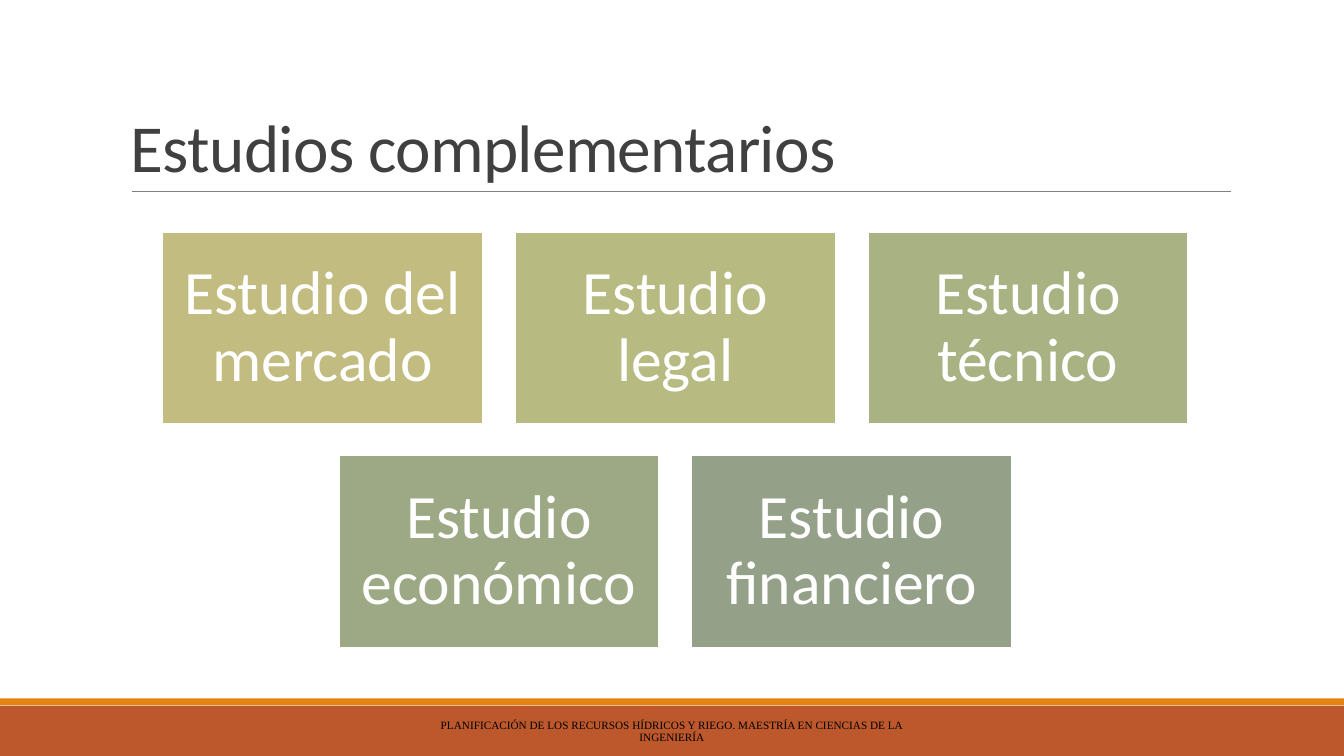
from dataclasses import dataclass

from lxml import etree
from pptx import Presentation
from pptx.dml.color import RGBColor
from pptx.enum.shapes import MSO_CONNECTOR, MSO_SHAPE
from pptx.enum.text import MSO_ANCHOR, PP_ALIGN
from pptx.oxml.ns import qn
from pptx.util import Cm, Pt

RECTANGLE = MSO_SHAPE.RECTANGLE
STRAIGHT = MSO_CONNECTOR.STRAIGHT
MIDDLE, BOTTOM = MSO_ANCHOR.MIDDLE, MSO_ANCHOR.BOTTOM
LEFT, CENTER = PP_ALIGN.LEFT, PP_ALIGN.CENTER


@dataclass(frozen=True)
class Theme:
    heading_font: str = "Calibri"
    footer_font: str = "Times New Roman"
    title_size: int = 48
    card_size: int = 44
    footer_size: int = 8
    title_color: str = "404040"
    footer_color: str = "000000"
    white: str = "FFFFFF"
    rule_color: str = "808080"
    band_color: str = "BD582C"
    stripe_color: str = "E48312"


THEME = Theme()

SLIDE_WIDTH, SLIDE_HEIGHT = 33.87, 19.05
CARD_WIDTH, CARD_HEIGHT = 8.08, 4.85
COLUMN_STEP, ROW_STEP = 8.89, 5.64
CARDS_CENTER, CARDS_TOP = 17.02, 5.84
CARD_INSET = 0.46

STUDY_ROWS = [
    [
        ("Estudio del mercado", "C2BC80"),
        ("Estudio legal", "B7BA81"),
        ("Estudio técnico", "A8B283"),
    ],
    [
        ("Estudio económico", "9DA985"),
        ("Estudio financiero", "94A088"),
    ],
]


def color(value):
    return RGBColor.from_string(value)


def write_text(shape, text, font, size, text_color, align, anchor, spacing):
    """Fill a shape with one wrapped paragraph and return its run."""
    frame = shape.text_frame
    frame.text = text
    frame.word_wrap = True
    frame.vertical_anchor = anchor
    paragraph = frame.paragraphs[0]
    paragraph.alignment = align
    paragraph.line_spacing = spacing
    run = paragraph.runs[0]
    run.font.name = font
    run.font.size = Pt(size)
    run.font.color.rgb = color(text_color)
    return run


def add_rectangle(slide, left, top, width, height, fill):
    shape = slide.shapes.add_shape(
        RECTANGLE, Cm(left), Cm(top), Cm(width), Cm(height))
    shape.shadow.inherit = False
    shape.fill.solid()
    shape.fill.fore_color.rgb = color(fill)
    shape.line.fill.background()
    return shape


def add_rule(slide, left, right, top):
    rule = slide.shapes.add_connector(
        STRAIGHT, Cm(left), Cm(top), Cm(right), Cm(top))
    rule.line.color.rgb = color(THEME.rule_color)
    rule.line.width = Pt(0.5)
    etree.SubElement(rule._element.spPr, qn("a:effectLst"))


def add_title(slide, text):
    box = slide.shapes.add_textbox(Cm(3.05), Cm(0.79), Cm(27.94), Cm(4.04))
    run = write_text(box, text, THEME.heading_font, THEME.title_size,
                     THEME.title_color, LEFT, BOTTOM, 0.85)
    run.font._element.set("spc", "-50")


def add_footer(slide, text):
    box = slide.shapes.add_textbox(Cm(10.24), Cm(17.93), Cm(13.39), Cm(1.02))
    write_text(box, text, THEME.footer_font, THEME.footer_size,
               THEME.footer_color, CENTER, MIDDLE, 0.9)


def add_card(slide, left, top, text, fill):
    card = add_rectangle(slide, left, top, CARD_WIDTH, CARD_HEIGHT, fill)
    card.line.color.rgb = color(THEME.white)
    card.line.width = Pt(1.25)
    frame = card.text_frame
    frame.margin_left = frame.margin_right = Cm(CARD_INSET)
    frame.margin_top = frame.margin_bottom = Cm(CARD_INSET)
    write_text(card, text, THEME.heading_font, THEME.card_size,
               THEME.white, CENTER, MIDDLE, 0.9)


def add_study_cards(slide):
    """Lay out the cards in rows, each centred on the same axis."""
    for row, studies in enumerate(STUDY_ROWS):
        row_width = (len(studies) - 1) * COLUMN_STEP + CARD_WIDTH
        row_left = CARDS_CENTER - row_width / 2
        top = CARDS_TOP + row * ROW_STEP
        for column, (text, fill) in enumerate(studies):
            add_card(slide, row_left + column * COLUMN_STEP, top, text, fill)


def main():
    presentation = Presentation()
    presentation.slide_width = Cm(SLIDE_WIDTH)
    presentation.slide_height = Cm(SLIDE_HEIGHT)
    slide = presentation.slides.add_slide(presentation.slide_layouts[6])

    add_rectangle(slide, 0, 17.78, SLIDE_WIDTH, 1.27, THEME.band_color)
    add_rectangle(slide, 0, 17.6, SLIDE_WIDTH, 0.17, THEME.stripe_color)
    add_rule(slide, 3.33, 31.01, 4.83)
    add_title(slide, "Estudios complementarios")
    add_footer(slide, "PLANIFICACIÓN DE LOS RECURSOS HÍDRICOS Y RIEGO. "
                      "MAESTRÍA EN CIENCIAS DE LA INGENIERÍA")
    add_study_cards(slide)

    presentation.save("out.pptx")


if __name__ == "__main__":
    main()
